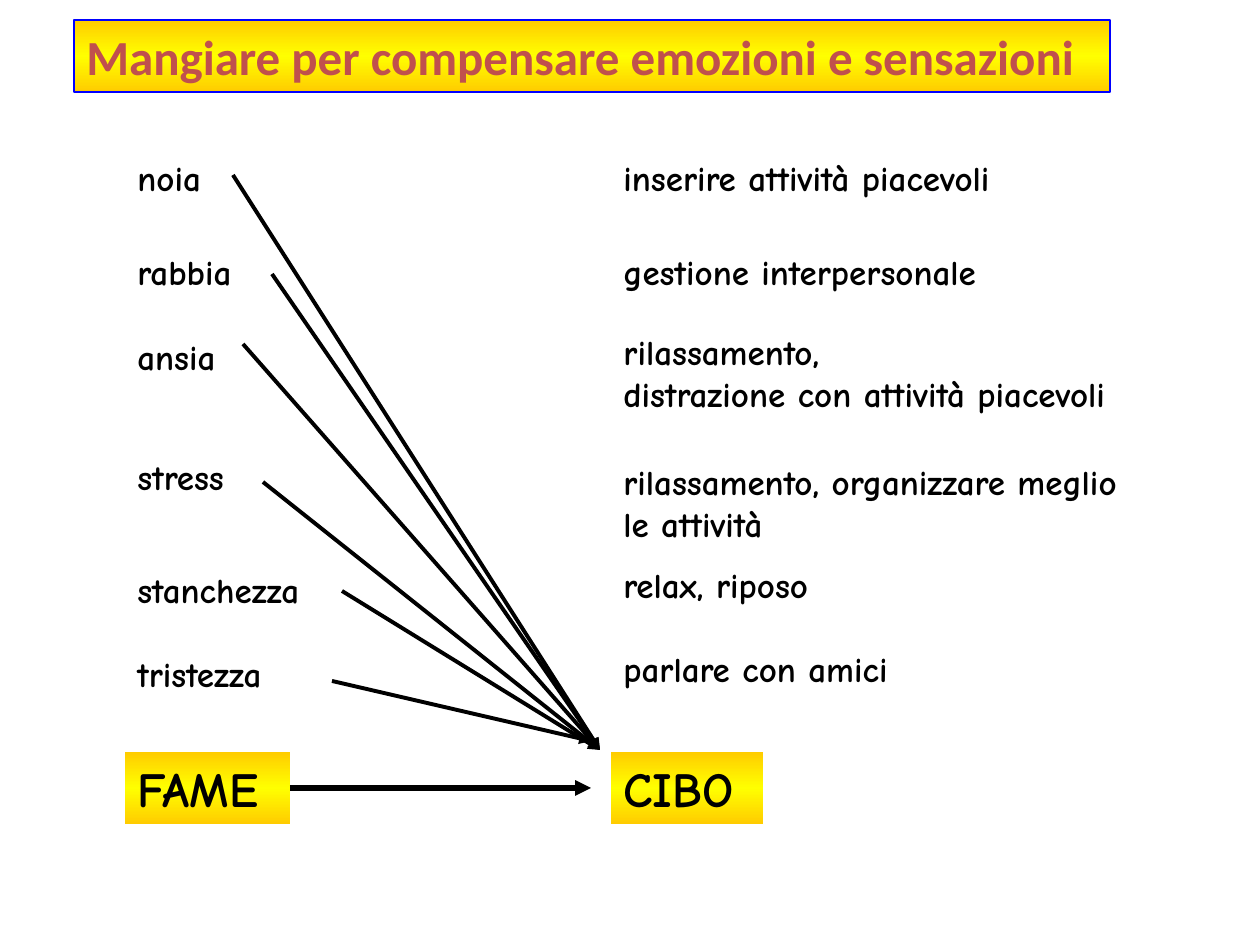
from copy import deepcopy

from pptx import Presentation
from pptx.dml.color import RGBColor
from pptx.enum.shapes import MSO_CONNECTOR, MSO_SHAPE
from pptx.enum.text import MSO_ANCHOR, MSO_AUTO_SIZE, PP_ALIGN
from pptx.oxml.ns import qn
from pptx.util import Emu, Pt
from lxml.etree import SubElement

PX = 914400 // 126
COLORS = {"text": "000000", "title": "C0504D", "border": "0000FF",
          "edge": "FFCC00", "middle": "FFFF00"}
FONT, TITLE_FONT = "Comic Neue", "Calibri"

# Content: (text, top, width), and where each feeling's arrow starts and ends
TITLE = "Mangiare per compensare emozioni e sensazioni"
FEELINGS = [
    ("noia", 150, 92, (233, 175), (600, 750)),
    ("rabbia", 244, 132, (272, 274), (600, 750)),
    ("ansia", 329, 110, (243, 344), (600, 750)),
    ("stress", 449, 130, (263, 482), (600, 750)),
    ("stanchezza", 562, 212, (342, 591), (600, 750)),
    ("tristezza", 646, 179, (332, 681), (591, 741)),
]
REMEDIES = [
    ("inserire attività piacevoli", 150, 449),
    ("gestione interpersonale", 244, 417),
    ("rilassamento,\ndistrazione con attività piacevoli", 324, 576),
    ("rilassamento, organizzare meglio le attività", 454, 546),
    ("relax, riposo", 557, 241),
    ("parlare con amici", 641, 315),
]
LEFT, RIGHT = 125, 611
LINE_H, TWO_LINES_H, BAND_H = 54, 97, 72
BAND_TOP = 752

prs = Presentation()
prs.slide_width, prs.slide_height = Emu(1260 * PX), Emu(945 * PX)
slide = prs.slides.add_slide(prs.slide_layouts[6])


def px(*values):
    return [Emu(v * PX) for v in values]


def rgb(name):
    return RGBColor.from_string(COLORS[name])


def write(s, text, size=20, font=FONT, color="text", wrap=False):
    tf = s.text_frame
    tf.word_wrap = wrap
    tf.auto_size = MSO_AUTO_SIZE.SHAPE_TO_FIT_TEXT
    tf.vertical_anchor = MSO_ANCHOR.TOP
    tf.text = text
    for p in tf.paragraphs:
        p.alignment = PP_ALIGN.LEFT
        f = p.runs[0].font
        f.name, f.size, f.bold = font, Pt(size), True
        f.color.rgb = rgb(color)


def add_text(text, x, y, w, h=LINE_H, **fmt):
    write(slide.shapes.add_textbox(*px(x, y, w, h)), text, **fmt)


def add_band(text, x, y, w, border=None, **fmt):
    s = slide.shapes.add_shape(MSO_SHAPE.RECTANGLE, *px(x, y, w, BAND_H))
    s.shadow.inherit = False
    s.fill.gradient()
    s.fill.gradient_angle = 90
    stop_list = s.fill.gradient_stops
    # A third stop makes the gradient symmetrical
    gs_list = s._element.spPr.find(".//" + qn("a:gsLst"))
    gs_list.insert(1, deepcopy(gs_list[0]))
    stop_list = s.fill.gradient_stops
    for stop, pos, name in zip(stop_list, (0, 0.5, 1), ("edge", "middle", "edge")):
        stop.position = pos
        stop.color.rgb = rgb(name)
    if border:
        s.line.color.rgb = rgb(border)
        s.line.width = Pt(0.75)
    else:
        s.line.fill.background()
    write(s, text, size=28, **fmt)
    return s


def add_arrow(start, end, width=2.25):
    c = slide.shapes.add_connector(MSO_CONNECTOR.STRAIGHT, *px(*start, *end))
    c.line.color.rgb = rgb("text")
    c.line.width = Pt(width)
    SubElement(c.line._get_or_add_ln(), qn("a:tailEnd"), type="triangle")
    SubElement(c._element.spPr, qn("a:effectLst"))
    return c


# Title
add_band(TITLE, 74, 20, 1036, border="border", font=TITLE_FONT, color="title")

# Feelings and remedies
for text, y, w, *_ in FEELINGS:
    add_text(text, LEFT, y, w)
for text, y, w in REMEDIES:
    wrap = "meglio" in text
    tall = wrap or "\n" in text
    add_text(text, RIGHT, y, w, TWO_LINES_H if tall else LINE_H, wrap=wrap)

# Hunger and food
hunger = add_band("FAME", LEFT, BAND_TOP, 165)
add_band("CIBO", RIGHT, BAND_TOP, 152)

# Arrows to food
mid = BAND_TOP + BAND_H // 2
add_arrow((LEFT + 165, mid), (591, mid), width=3).begin_connect(hunger, 3)
for *_, start, end in FEELINGS:
    add_arrow(start, end)

prs.save("out.pptx")
